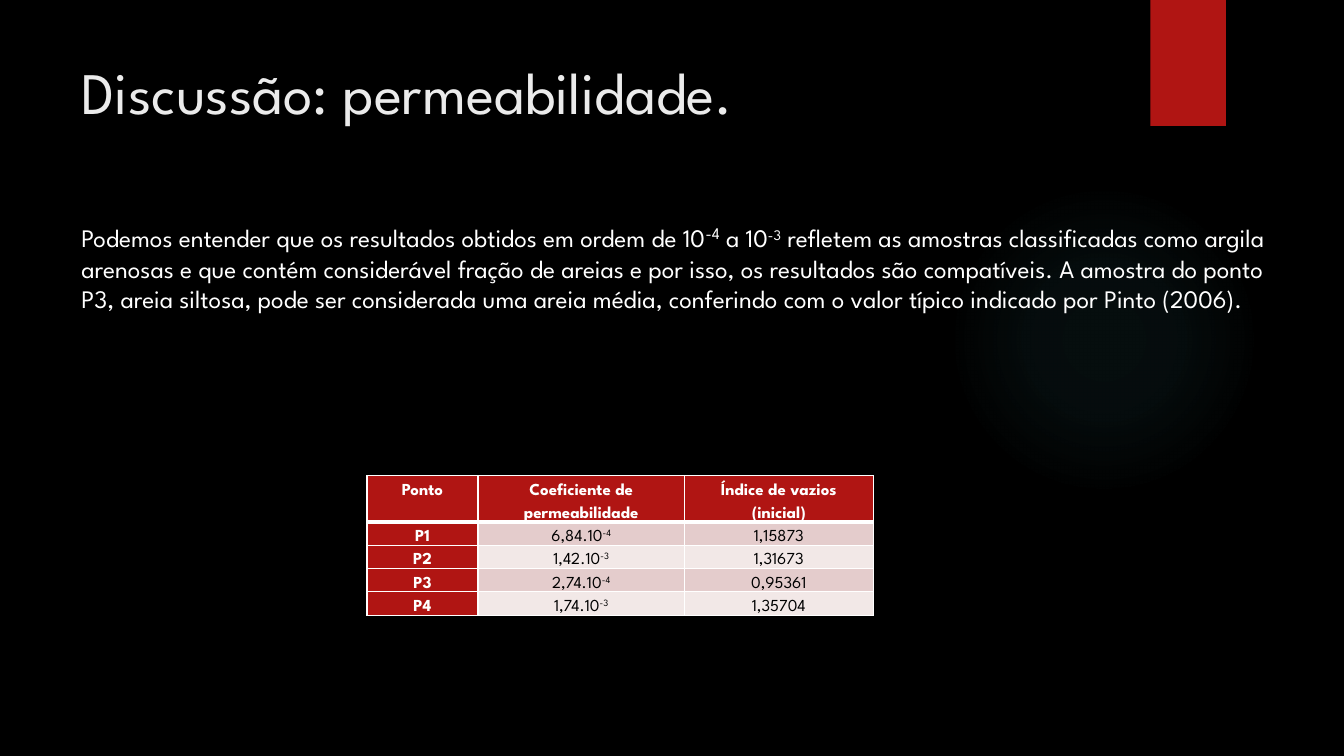
from dataclasses import dataclass
from typing import NamedTuple

import pptx
import pptx.dml.color
import pptx.enum.shapes
import pptx.enum.text
import pptx.oxml
import pptx.oxml.ns
import pptx.util
from pptx.util import Inches


@dataclass(frozen=True)
class Theme:
    font: str = "League Spartan"
    background: str = "000000"
    accent: str = "B01513"
    glow: str = "50B9C1"
    title: str = "EBEBEB"
    light: str = "FFFFFF"
    dark: str = "000000"
    bands: tuple[str, str] = ("E4CCCC", "F2E8E7")
    title_size: int = 42
    body_size: int = 18
    first_exponent_size: int = 20
    table_size: int = 12


class TextRun(NamedTuple):
    text: str
    size: int
    color: str
    bold: bool = False
    superscript: bool = False


class Sample(NamedTuple):
    point: str
    mantissa: str
    exponent: str
    void_ratio: str


class GlowStop(NamedTuple):
    position: int
    opacity: int


THEME = Theme()
HEADINGS = ("Ponto", "Coeficiente de permeabilidade", "Índice de vazios (inicial)")
SAMPLES = (
    Sample("P1", "6,84", "-4", "1,15873"),
    Sample("P2", "1,42", "-3", "1,31673"),
    Sample("P3", "2,74", "-4", "0,95361"),
    Sample("P4", "1,74", "-3", "1,35704"),
)
GLOW_STOPS = (GlowStop(0, 7), GlowStop(36, 6), GlowStop(69, 0))
COLUMN_WIDTHS = (1.1, 2.05, 1.87)
ROW_HEIGHT = 0.23
DISCUSSION = (
    TextRun("Podemos entender que os resultados obtidos em ordem de 10", THEME.body_size, THEME.light),
    TextRun("-4", THEME.first_exponent_size, THEME.light, superscript=True),
    TextRun(" a 10", THEME.body_size, THEME.light),
    TextRun("-3", THEME.body_size, THEME.light, superscript=True),
    TextRun(
        " refletem as amostras classificadas como argila arenosas e que contém considerável "
        "fração de areias e por isso, os resultados são compatíveis. A amostra do ponto P3, "
        "areia siltosa, pode ser considerada uma areia média, conferindo com o valor típico "
        "indicado por Pinto (2006).",
        THEME.body_size,
        THEME.light,
    ),
)


def rgb(color: str) -> pptx.dml.color.RGBColor:
    return pptx.dml.color.RGBColor.from_string(color)


def add_runs(paragraph, runs: tuple[TextRun, ...]) -> None:
    for text_run in runs:
        run = paragraph.add_run()
        run.text = text_run.text
        run.font.name = THEME.font
        run.font.size = pptx.util.Pt(text_run.size)
        run.font.bold = text_run.bold
        run.font.color.rgb = rgb(text_run.color)
        if text_run.superscript:
            run._r.get_or_add_rPr().set("baseline", "30000")


def add_decoration(slide, preset, left: float, top: float, width: float, height: float):
    shape = slide.shapes.add_shape(preset, Inches(left), Inches(top), Inches(width), Inches(height))
    shape.shadow.inherit = False
    shape.line.fill.background()
    return shape


def add_glow(slide) -> None:
    glow = add_decoration(slide, pptx.enum.shapes.MSO_SHAPE.OVAL, 9.41, 1.83, 3.08, 3.08)
    stops = "".join(
        f'<a:gs pos="{stop.position * 1000}"><a:srgbClr val="{THEME.glow}">'
        f'<a:alpha val="{stop.opacity * 1000}"/></a:srgbClr></a:gs>'
        for stop in GLOW_STOPS
    )
    gradient = pptx.oxml.parse_xml(
        f'<a:gradFill {pptx.oxml.ns.nsdecls("a")}><a:gsLst>{stops}</a:gsLst>'
        '<a:path path="circle"><a:fillToRect l="50000" t="50000" r="50000" b="50000"/></a:path>'
        "</a:gradFill>"
    )
    geometry = glow._element.spPr.find(pptx.oxml.ns.qn("a:prstGeom"))
    geometry.addnext(gradient)


def add_ribbon(slide) -> None:
    ribbon = add_decoration(slide, pptx.enum.shapes.MSO_SHAPE.RECTANGLE, 11.41, 0, 0.75, 1.25)
    ribbon.fill.solid()
    ribbon.fill.fore_color.rgb = rgb(THEME.accent)


def format_title(slide) -> None:
    title = slide.shapes.title
    title.left, title.top = Inches(0.71), Inches(0.5)
    title.width, title.height = Inches(10.29), Inches(1.53)
    title.text_frame.vertical_anchor = pptx.enum.text.MSO_ANCHOR.TOP
    paragraph = title.text_frame.paragraphs[0]
    paragraph.alignment = pptx.enum.text.PP_ALIGN.LEFT
    add_runs(paragraph, (TextRun("Discussão: permeabilidade.", THEME.title_size, THEME.title),))


def add_discussion(slide) -> None:
    box = slide.shapes.add_textbox(Inches(0.71), Inches(2.13), Inches(12.17), Inches(1.62))
    box.text_frame.word_wrap = True
    add_runs(box.text_frame.paragraphs[0], DISCUSSION)


def set_borders(cell, top: int, bottom: int) -> None:
    properties = cell._tc.get_or_add_tcPr()
    for side, width in (("L", 1), ("R", 1), ("T", top), ("B", bottom)):
        properties.append(pptx.oxml.parse_xml(
            f'<a:ln{side} {pptx.oxml.ns.nsdecls("a")} w="{pptx.util.Pt(width)}"><a:solidFill>'
            f'<a:srgbClr val="{THEME.light}"/></a:solidFill></a:ln{side}>'
        ))


def fill_cell(cell, runs: tuple[TextRun, ...], fill: str, top: int = 1, bottom: int = 1) -> None:
    set_borders(cell, top, bottom)
    cell.fill.solid()
    cell.fill.fore_color.rgb = rgb(fill)
    cell.margin_left = cell.margin_right = Inches(0.07)
    cell.margin_top = cell.margin_bottom = 0
    paragraph = cell.text_frame.paragraphs[0]
    paragraph.alignment = pptx.enum.text.PP_ALIGN.CENTER
    paragraph.line_spacing = 1.5
    add_runs(paragraph, runs)


def heading_run(text: str) -> TextRun:
    return TextRun(text, THEME.table_size, THEME.light, bold=True)


def value_run(text: str, superscript: bool = False) -> TextRun:
    return TextRun(text, THEME.table_size, THEME.dark, superscript=superscript)


def add_results_table(slide) -> None:
    row_count = len(SAMPLES) + 1
    table = slide.shapes.add_table(
        row_count, len(HEADINGS), Inches(3.64), Inches(4.72),
        Inches(sum(COLUMN_WIDTHS)), Inches(ROW_HEIGHT * (row_count + 1)),
    ).table
    for column, width in zip(table.columns, COLUMN_WIDTHS):
        column.width = Inches(width)
    for index, row in enumerate(table.rows):
        row.height = Inches(ROW_HEIGHT * (2 if index == 0 else 1))
    for column, heading in enumerate(HEADINGS):
        fill_cell(table.cell(0, column), (heading_run(heading),), THEME.accent, bottom=3)
    for row, sample in enumerate(SAMPLES, start=1):
        band = THEME.bands[(row - 1) % 2]
        coefficient = (value_run(f"{sample.mantissa}.10"), value_run(sample.exponent, True))
        cells = (
            ((heading_run(sample.point),), THEME.accent),
            (coefficient, band),
            ((value_run(sample.void_ratio),), band),
        )
        for column, (runs, fill) in enumerate(cells):
            fill_cell(table.cell(row, column), runs, fill, top=3 if row == 1 else 1)


def main() -> None:
    presentation = pptx.Presentation()
    presentation.slide_width, presentation.slide_height = Inches(13.33), Inches(7.5)
    slide = presentation.slides.add_slide(presentation.slide_layouts.get_by_name("Title Only"))
    slide.background.fill.solid()
    slide.background.fill.fore_color.rgb = rgb(THEME.background)
    add_glow(slide)
    add_ribbon(slide)
    format_title(slide)
    add_results_table(slide)
    add_discussion(slide)
    presentation.save("out.pptx")


if __name__ == "__main__":
    main()
